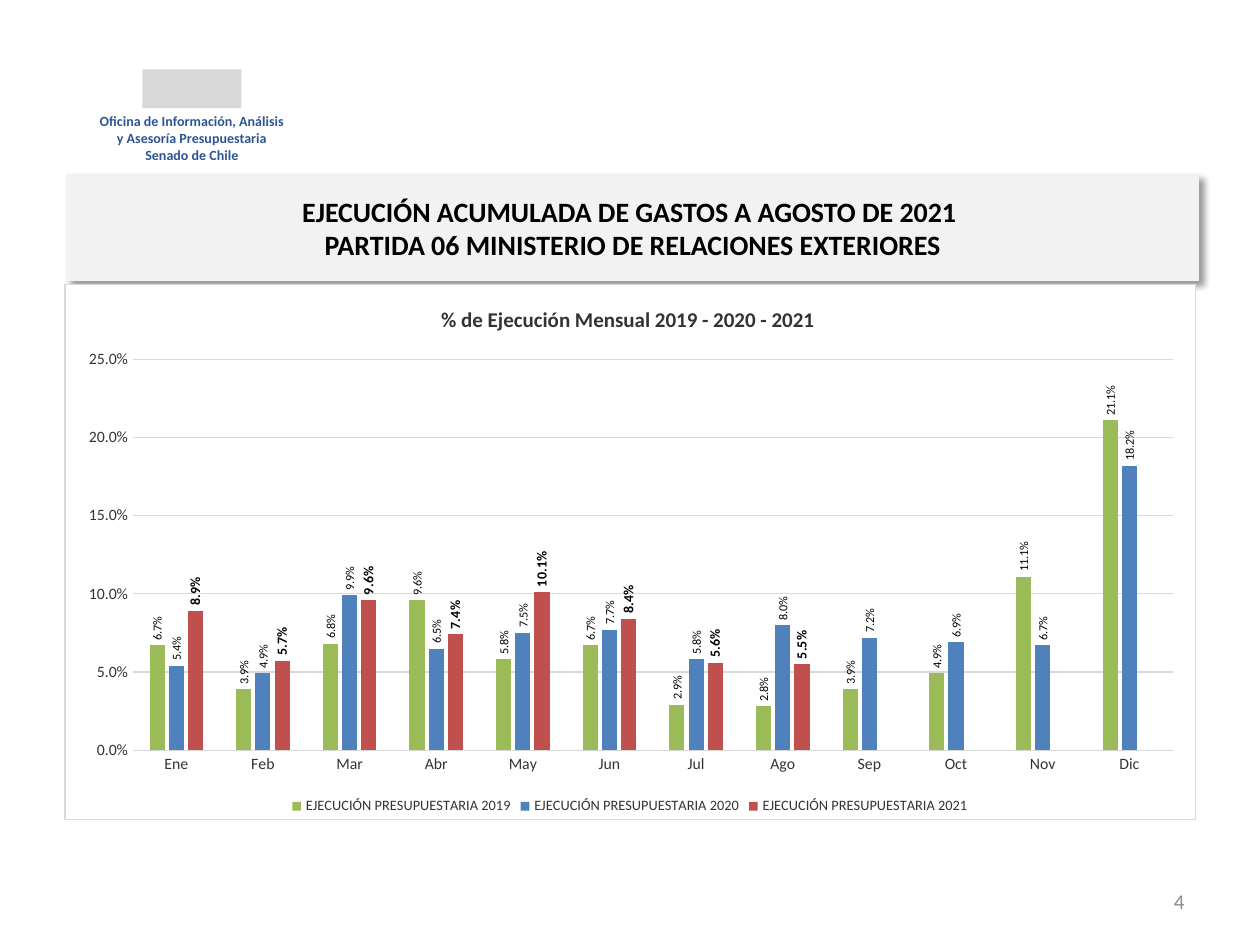
from lxml import etree
from pptx import Presentation
from pptx.chart.data import CategoryChartData
from pptx.dml.color import RGBColor
from pptx.enum import chart as ch, shapes, text
from pptx.oxml import parse_xml
from pptx.oxml.ns import qn
from pptx.util import Cm, Pt

A_NS = 'xmlns:a="http://schemas.openxmlformats.org/drawingml/2006/main"'
C_NS = 'xmlns:c="http://schemas.openxmlformats.org/drawingml/2006/chart"'


def rgb(value):
    return RGBColor.from_string(value)


def style(font, size, color, bold=False):
    font.name, font.size, font.bold = "Calibri", Pt(size), bold
    font.color.rgb = rgb(color)


prs = Presentation()
prs.slide_width, prs.slide_height = Cm(25.4), Cm(19.05)
slide = prs.slides.add_slide(prs.slide_layouts[5])

# Plain block above the office name
block = slide.shapes.add_shape(shapes.MSO_SHAPE.RECTANGLE, Cm(2.87), Cm(1.4), Cm(2), Cm(0.78))
block.shadow.inherit = False
block.fill.solid()
block.fill.fore_color.rgb = rgb("D9D9D9")
block.line.fill.background()

# Office name
office = slide.shapes.add_textbox(Cm(1.7), Cm(2.15), Cm(4.34), Cm(1.3))
office.text_frame.word_wrap = True
office.text_frame.text = ("Oficina de Información, Análisis y Asesoría Presupuestaria\n"
                          "Senado de Chile")
for paragraph in office.text_frame.paragraphs:
    paragraph.alignment = text.PP_ALIGN.CENTER
    style(paragraph.runs[0].font, 8, "2F5496", bold=True)

# Page number
page = slide.shapes.add_textbox(Cm(18.21), Cm(17.65), Cm(5.92), Cm(1.02))
page.text_frame.word_wrap = True
page.text_frame.vertical_anchor = text.MSO_ANCHOR.MIDDLE
page.text_frame.text = "4"
page.text_frame.paragraphs[0].alignment = text.PP_ALIGN.RIGHT
style(page.text_frame.paragraphs[0].runs[0].font, 12, "8C8C8C")

# Title band with its shadow
title = slide.shapes.title
title.left, title.top, title.width, title.height = Cm(1.35), Cm(3.52), Cm(22.81), Cm(2.14)
title.fill.solid()
title.fill.fore_color.rgb = rgb("F2F2F2")
title.line.color.rgb = rgb("F2F2F2")
title.line.width = Pt(0.75)
title.text_frame.auto_size = text.MSO_AUTO_SIZE.NONE
title.text_frame.vertical_anchor = text.MSO_ANCHOR.MIDDLE
title.text_frame.text = ("EJECUCIÓN ACUMULADA DE GASTOS A AGOSTO DE 2021 \v"
                         "PARTIDA 06 MINISTERIO DE RELACIONES EXTERIORES")
title.text_frame.paragraphs[0].alignment = text.PP_ALIGN.CENTER
for run in title.text_frame.paragraphs[0].runs:
    style(run.font, 16, "000000", bold=True)
title._element.spPr.append(parse_xml(
    f'<a:effectLst {A_NS}><a:outerShdw blurRad="50800" dist="38100" dir="2700000" algn="tl" '
    'rotWithShape="0"><a:srgbClr val="000000"><a:alpha val="40000"/></a:srgbClr>'
    '</a:outerShdw></a:effectLst>'))

# Monthly execution, in percent; 2021 runs to August
months = "Ene Feb Mar Abr May Jun Jul Ago Sep Oct Nov Dic".split()
execution = [
    ("2019", "9BBB59", [6.7, 3.9, 6.8, 9.6, 5.8, 6.7, 2.9, 2.8, 3.9, 4.9, 11.1, 21.1]),
    ("2020", "4F81BD", [5.4, 4.9, 9.9, 6.5, 7.5, 7.7, 5.8, 8.0, 7.2, 6.9, 6.7, 18.2]),
    ("2021", "C0504D", [8.9, 5.7, 9.6, 7.4, 10.1, 8.4, 5.6, 5.5] + [None] * 4),
]
data = CategoryChartData(number_format="0.0%")
data.categories = months
for year, color, percents in execution:
    data.add_series(f"EJECUCIÓN PRESUPUESTARIA {year}",
                    [None if p is None else round(p / 100, 3) for p in percents])
chart = slide.shapes.add_chart(ch.XL_CHART_TYPE.COLUMN_CLUSTERED, Cm(1.3), Cm(5.72),
                               Cm(22.81), Cm(10.82), data).chart
style(chart.font, 10, "000000")
chart.has_title = True
chart.chart_title.include_in_layout = False
chart.chart_title.text_frame.text = "% de Ejecución Mensual 2019 - 2020 - 2021 "
style(chart.chart_title.text_frame.paragraphs[0].runs[0].font, 12, "333333", bold=True)

# Columns and their upright labels
plot = chart.plots[0]
plot.gap_width, plot.overlap = 219, -27
plot.vary_by_categories = False
for series, (year, color, percents) in zip(plot.series, execution):
    series.format.fill.solid()
    series.format.fill.fore_color.rgb = rgb(color)
    series.invert_if_negative = False
    labels = series.data_labels
    labels.show_value = True
    labels.number_format, labels.number_format_is_linked = "0.0%", False
    labels.position = ch.XL_LABEL_POSITION.OUTSIDE_END
    current = year == "2021"
    style(labels.font, 8 if current else 7, "000000", bold=current)
    body = labels._element.find(qn("c:txPr")).find(qn("a:bodyPr"))
    body.set("rot", "-5400000")
    body.set("vert", "horz")

# Axes and legend
months_axis, percent_axis = chart.category_axis, chart.value_axis
for axis in (months_axis, percent_axis):
    axis.major_tick_mark = axis.minor_tick_mark = ch.XL_TICK_MARK.NONE
    style(axis.tick_labels.font, 9, "333333")
percent_axis.minimum_scale, percent_axis.maximum_scale, percent_axis.major_unit = 0, 0.25, 0.05
percent_axis.tick_labels.number_format = "0.0%"
percent_axis.tick_labels.number_format_is_linked = False
percent_axis.format.line.fill.background()
for line in (months_axis.format.line, percent_axis.major_gridlines.format.line):
    line.color.rgb = rgb("D9D9D9")
    line.width = Pt(0.75)
chart.has_legend = True
chart.legend.position = ch.XL_LEGEND_POSITION.BOTTOM
chart.legend.include_in_layout = False
style(chart.legend.font, 8.2, "333333")

# Plot area position
plot_area = chart._chartSpace.chart.plotArea
for old in plot_area.findall(qn("c:layout")):
    plot_area.remove(old)
layout = parse_xml(f'<c:layout {C_NS}><c:manualLayout><c:layoutTarget val="inner"/>'
                   '<c:xMode val="edge"/><c:yMode val="edge"/></c:manualLayout></c:layout>')
for side, share in (("x", 0.06), ("y", 0.14), ("w", 0.92), ("h", 0.73)):
    etree.SubElement(layout[0], qn(f"c:{side}")).set("val", str(share))
plot_area.insert(0, layout)

# Chart background and border
chart._chartSpace.chart.addnext(parse_xml(
    f'<c:spPr {C_NS} {A_NS}><a:solidFill><a:srgbClr val="FFFFFF"/></a:solidFill>'
    '<a:ln w="9525"><a:solidFill><a:srgbClr val="D9D9D9"/></a:solidFill></a:ln></c:spPr>'))

prs.save("out.pptx")
